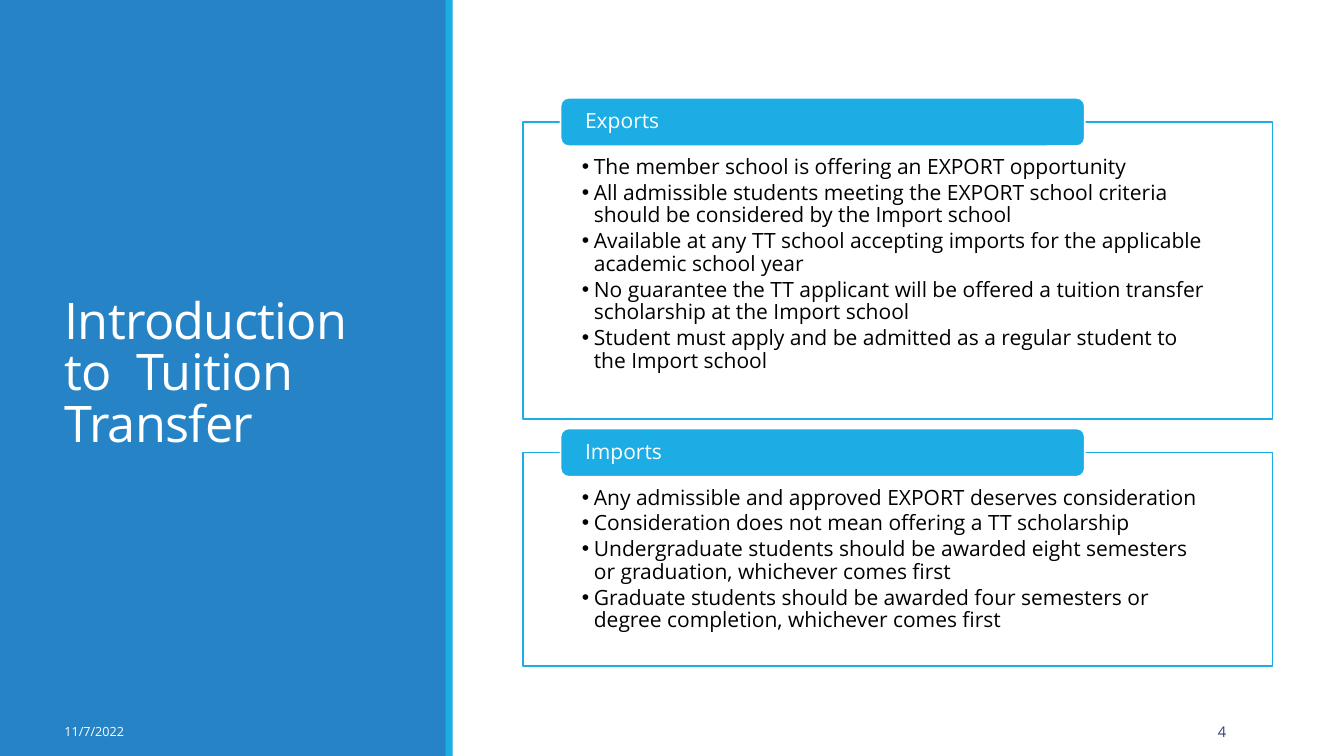
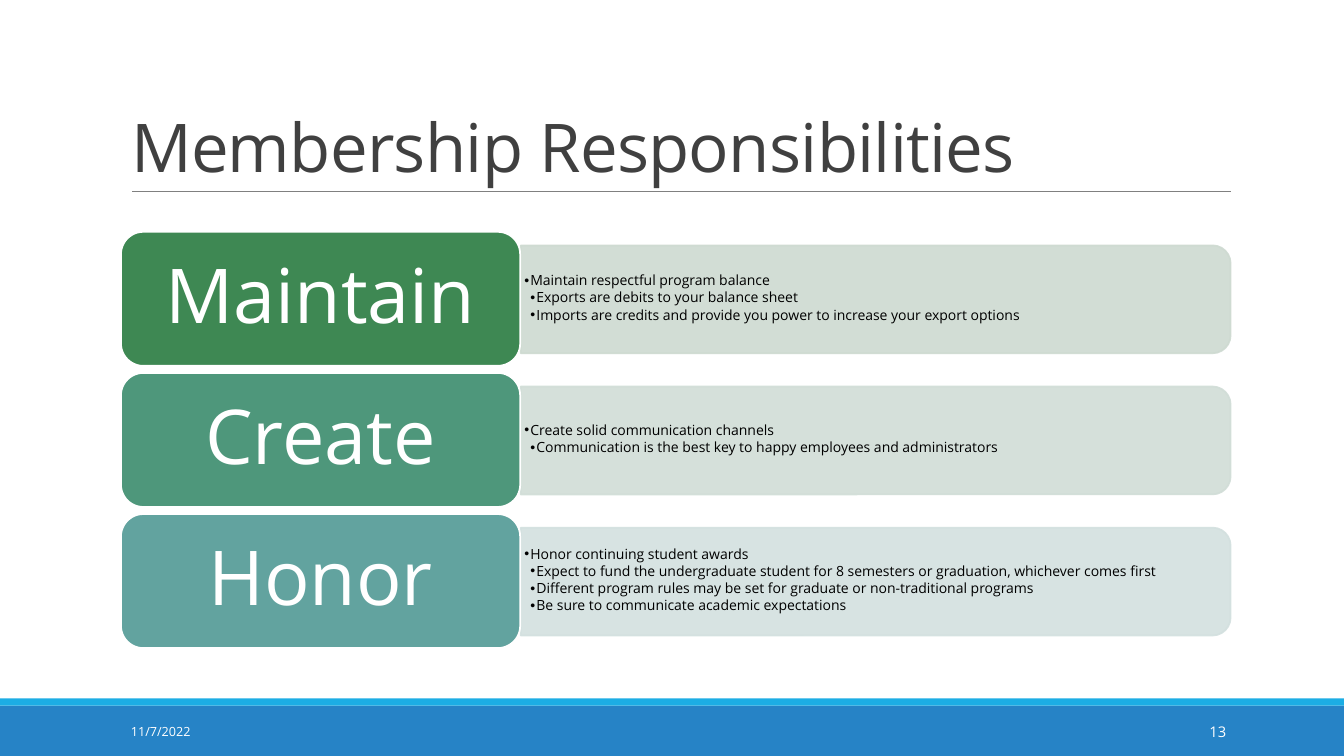
"""Build two slides on exports, imports and membership responsibilities."""
from lxml.etree import SubElement
from pptx import Presentation
from pptx.dml.color import RGBColor
from pptx.enum.shapes import MSO_CONNECTOR, MSO_SHAPE
from pptx.enum.text import MSO_ANCHOR, MSO_AUTO_SIZE, PP_ALIGN
from pptx.oxml.ns import qn
from pptx.util import Inches, Pt

BLUE, CYAN, WHITE, BLACK = "2683C6", "1CADE4", "FFFFFF", "000000"
NAVY, DARK_GREY, GREY = "344068", "404040", "808080"
FRAME = {"word_wrap": True, "auto_size": MSO_AUTO_SIZE.NONE, "vertical_anchor": MSO_ANCHOR.MIDDLE}
PARAGRAPH = {"alignment": PP_ALIGN.LEFT, "line_spacing": 0.9, "space_before": Pt(0), "space_after": Pt(0)}
TITLE = {"line_spacing": 0.85}
FOOTER = {"line_spacing": 1.0, "space_after": Pt(6)}


def paint(shape, fill, line=None):
    """Give a shape a flat fill and an optional outline."""
    shape.fill.solid()
    shape.fill.fore_color.rgb = RGBColor.from_string(fill)
    if line:
        shape.line.color.rgb = RGBColor.from_string(line)
        shape.line.width = Pt(1.25)
    else:
        shape.line.fill.background()


def write(shape, lines, size, color, frame={}, paragraph={}, bullet_step=None, sub_level=0):
    """Fill a shape with formatted paragraphs, bulleted when a step is given."""
    text_frame = shape.text_frame
    text_frame.text = "\n".join(lines)
    for name, value in {**FRAME, **frame}.items():
        setattr(text_frame, name, value)
    for index, item in enumerate(text_frame.paragraphs):
        for name, value in {**PARAGRAPH, **paragraph}.items():
            setattr(item, name, value)
        font = item.runs[0].font
        for name, value in {"name": "Open Sans", "size": Pt(size), "bold": False}.items():
            setattr(font, name, value)
        font.color.rgb = RGBColor.from_string(color)
        if bullet_step:
            item.level = sub_level if index else 0
            properties = item._p.get_or_add_pPr()
            properties.set("marL", str(Inches(bullet_step * (item.level + 1))))
            properties.set("indent", str(Inches(-bullet_step)))
            SubElement(properties, qn("a:buChar"), char="•")


deck = Presentation()
deck.slide_width, deck.slide_height = Inches(13.33), Inches(7.5)
introduction = deck.slides.add_slide(deck.slide_layouts.get_by_name("Two Content"))
responsibilities = deck.slides.add_slide(deck.slide_layouts.get_by_name("Comparison"))

bands = [
    (introduction, BLUE, 0, 0, 4.43, 7.5),
    (introduction, CYAN, 4.42, 0, 0.07, 7.5),
    (responsibilities, BLUE, 0, 7, 13.33, 0.5),
    (responsibilities, CYAN, 0, 6.93, 13.33, 0.07),
]
for slide, color, *box in bands:
    band = slide.shapes.add_shape(MSO_SHAPE.RECTANGLE, *map(Inches, box))
    band.shadow.inherit = False
    paint(band, color)
    slide.shapes.title.element.addprevious(band.element)

titles = [
    (introduction, "Introduction to  Tuition Transfer", 36, WHITE, MSO_ANCHOR.MIDDLE, (0.54, 0.57, 3.37, 6.31)),
    (responsibilities, "Membership Responsibilities", 48, DARK_GREY, MSO_ANCHOR.BOTTOM, (1.2, 0.31, 11, 1.59)),
]
for slide, heading, size, color, anchor, box in titles:
    title = slide.shapes.title
    title.left, title.top, title.width, title.height = map(Inches, box)
    write(title, [heading], size, color, {"vertical_anchor": anchor}, TITLE)
    title.text_frame.paragraphs[0].runs[0].font._element.set("spc", "-50")

footers = [
    (introduction, "11/7/2022", 9, WHITE, PP_ALIGN.LEFT, 0.54, 1.9),
    (introduction, "4", 10.5, NAVY, PP_ALIGN.RIGHT, 11.07, 1.19),
    (responsibilities, "11/7/2022", 9, WHITE, PP_ALIGN.LEFT, 1.2, 2.7),
    (responsibilities, "13", 10.5, WHITE, PP_ALIGN.RIGHT, 10.83, 1.43),
]
for slide, label, size, color, alignment, left, width in footers:
    footer = slide.shapes.add_textbox(Inches(left), Inches(7.06), Inches(width), Inches(0.4))
    write(footer, [label], size, color, paragraph={**FOOTER, "alignment": alignment})

directions = [
    ("Exports", 1.21, 2.95, [
        "The member school is offering an EXPORT opportunity",
        "All admissible students meeting the EXPORT school criteria should be considered by the Import school",
        "Available at any TT school accepting imports for the applicable academic school year",
        "No guarantee the TT applicant will be offered a tuition transfer scholarship at the Import school",
        "Student must apply and be admitted as a regular student to the Import school",
    ]),
    ("Imports", 4.49, 2.12, [
        "Any admissible and approved EXPORT deserves consideration",
        "Consideration does not mean offering a TT scholarship",
        "Undergraduate students should be awarded eight semesters or graduation, whichever comes first",
        "Graduate students should be awarded four semesters or degree completion, whichever comes first",
    ]),
]
rules_frame = {
    "vertical_anchor": MSO_ANCHOR.TOP,
    "margin_left": Inches(0.58), "margin_right": Inches(0.58),
    "margin_top": Inches(0.34), "margin_bottom": Inches(0.12),
}
header_frame = {"margin_left": Inches(0.22), "margin_right": Inches(0.22), "margin_top": 0, "margin_bottom": 0}
for rules, (direction, top, height, lines) in zip(list(introduction.placeholders)[1:], directions):
    rules.left, rules.top, rules.width, rules.height = map(Inches, (5.19, top, 7.43, height))
    paint(rules, WHITE, CYAN)
    write(rules, lines, 15, BLACK, rules_frame, {"space_after": Pt(2.25)}, bullet_step=0.12)
    header = introduction.shapes.add_shape(
        MSO_SHAPE.ROUNDED_RECTANGLE, Inches(5.56), Inches(top - 0.24), Inches(5.2), Inches(0.48))
    header.shadow.inherit = False
    paint(header, CYAN, WHITE)
    write(header, [direction], 15, WHITE, header_frame)

title_rule = responsibilities.shapes.add_connector(
    MSO_CONNECTOR.STRAIGHT, Inches(1.31), Inches(1.9), Inches(12.21), Inches(1.9))
title_rule.line.color.rgb = RGBColor.from_string(GREY)
title_rule.line.width = Pt(0.5)
SubElement(title_rule.element.spPr, qn("a:effectLst"))

duties = [
    ("Maintain", "3E8853", "CEDAD1", [
        "Maintain respectful program balance",
        "Exports are debits to your balance sheet",
        "Imports are credits and provide you power to increase your export options",
    ]),
    ("Create", "4E977B", "D1DDD7", [
        "Create solid communication channels",
        "Communication is the best key to happy employees and administrators",
    ]),
    ("Honor", "62A39F", "D3E0DF", [
        "Honor continuing student awards",
        "Expect to fund the undergraduate student for 8 semesters or graduation, whichever comes first",
        "Different program rules may be set for graduate or non-traditional programs",
        "Be sure to communicate academic expectations",
    ]),
]
details_frame = {
    "margin_left": Inches(0.04), "margin_right": Inches(0.04),
    "margin_top": Inches(0.02), "margin_bottom": Inches(0.02),
}
*detail_lists, unused = list(responsibilities.placeholders)[1:]
unused.element.getparent().remove(unused.element)
for row, (details, (duty, color, tint, lines)) in enumerate(zip(detail_lists, duties)):
    top = 2.3 + 1.4 * row
    bar = responsibilities.shapes.add_shape(
        MSO_SHAPE.ROUND_2_SAME_RECTANGLE, Inches(8.15), Inches(top - 2.85), Inches(1.07), Inches(7.04))
    bar.rotation = 90
    bar.shadow.inherit = False
    paint(bar, tint, tint)
    for shade in bar.element.iter(qn("a:srgbClr")):
        SubElement(shade, qn("a:alpha"), val="90000")
    details.element.addprevious(bar.element)
    details.left, details.top, details.width, details.height = map(Inches, (5.16, top + 0.18, 6.99, 0.96))
    write(details, lines, 10, BLACK, details_frame, {"space_after": Pt(1.5)}, bullet_step=0.06, sub_level=1)
    tile = responsibilities.shapes.add_shape(
        MSO_SHAPE.ROUNDED_RECTANGLE, Inches(1.2), Inches(top), Inches(3.96), Inches(1.33))
    tile.shadow.inherit = False
    paint(tile, color, WHITE)
    write(tile, [duty], 54, WHITE, paragraph={"alignment": PP_ALIGN.CENTER})

deck.save("out.pptx")
